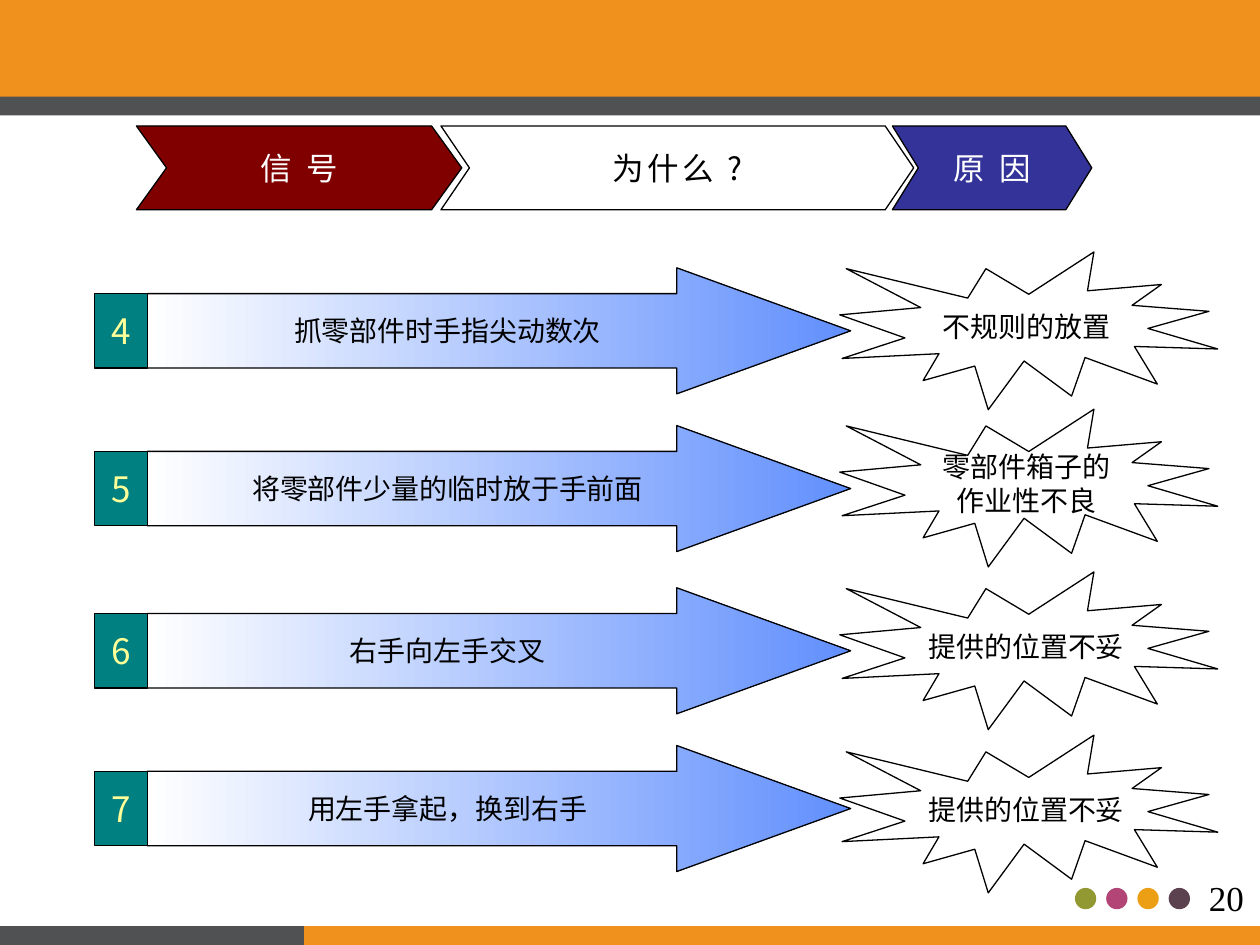
import pptx
import pptx.util
import pptx.dml.color
import pptx.enum.shapes
import pptx.enum.text
import pptx.oxml.ns
import lxml.etree

Cm = pptx.util.Cm
Pt = pptx.util.Pt
RGB = pptx.dml.color.RGBColor
KIND = pptx.enum.shapes.MSO_SHAPE
TEXT = pptx.enum.text

BLACK = RGB(0x00, 0x00, 0x00)
WHITE = RGB(0xFF, 0xFF, 0xFF)
ORANGE = RGB(0xF0, 0x90, 0x1D)
GREY = RGB(0x50, 0x51, 0x53)
TEAL = RGB(0x00, 0x80, 0x80)
YELLOW = RGB(0xFF, 0xFF, 0x99)
BLUE = RGB(0x61, 0x8F, 0xFD)
NAVY = RGB(0x33, 0x33, 0x99)
MAROON = RGB(0x80, 0x00, 0x00)
DOTS = (RGB(0x93, 0x99, 0x32), RGB(0xB2, 0x44, 0x76),
        RGB(0xEC, 0x9F, 0x14), RGB(0x5C, 0x41, 0x4F))

SANS = "Noto Sans CJK SC"
SERIF = "Times New Roman"
FRAME = {"word_wrap": False, "vertical_anchor": TEXT.MSO_ANCHOR.MIDDLE}

# left, width, notch, fill, text colour, text; the leftmost lies on top
HEADS = (
    (17.99, 4.02, 0.31, NAVY, WHITE, "原 因"),
    (8.89, 9.53, 0.34, WHITE, BLACK, "为什么 ?"),
    (2.75, 6.56, 0.36, MAROON, WHITE, "信 号"),
)
# arrow top, burst top, number, signal, cause
ROWS = (
    (5.4, 5.08, "4", "抓零部件时手指尖动数次", "不规则的放置"),
    (8.58, 8.25, "5", "将零部件少量的临时放于手前面", "零部件箱子的\n作业性不良"),
    (11.85, 11.53, "6", "右手向左手交叉", "提供的位置不妥"),
    (15.03, 14.82, "7", "用左手拿起，换到右手", "提供的位置不妥"),
)


def put(item, form):
    """Set each attribute named in the dict."""
    for key, val in form.items():
        setattr(item, key, val)


def shape(slide, kind, box, fill=None, line=None):
    new = slide.shapes.add_shape(kind, *map(Cm, box))
    new.shadow.inherit = False
    if fill is None:
        new.fill.background()
    else:
        new.fill.solid()
        new.fill.fore_color.rgb = fill
    if line is None:
        new.line.fill.background()
    else:
        new.line.color.rgb = line
        new.line.width = Pt(0.75)
    return new


def write(item, text, size, color, face=SANS, gap=0):
    """Fill a shape with centred lines; gap is letter spacing in points."""
    frame = item.text_frame
    put(frame, FRAME)
    for num, words in enumerate(text.split("\n")):
        para = frame.add_paragraph() if num else frame.paragraphs[0]
        para.alignment = TEXT.PP_ALIGN.CENTER
        run = para.add_run()
        run.text = words
        put(run.font, {"size": Pt(size), "name": face})
        run.font.color.rgb = color
        props = run.font._element
        east = lxml.etree.SubElement(props, pptx.oxml.ns.qn("a:ea"))
        east.set("typeface", face)
        if gap:
            props.set("spc", str(gap * 100))


def shade(item):
    """Blend from white at the left to blue at the right."""
    item.fill.gradient()
    item.fill.gradient_angle = 0
    for stop, place, color in zip(item.fill.gradient_stops, (0, 1), (WHITE, BLUE)):
        stop.position = place
        stop.color.rgb = color


def trim(slide):
    """Draw the bands, the dots and the page number."""
    for num, color in enumerate(DOTS):
        shape(slide, KIND.OVAL, (21.67 + 0.63 * num, 17.9, 0.43, 0.43), color)
    bands = (
        ((0, 0, 25.4, 1.96), ORANGE),
        ((0, 1.95, 25.4, 0.38), GREY),
        ((4.95, 18.67, 20.45, 0.38), ORANGE),
        ((0, 18.67, 6.13, 0.38), GREY),
    )
    for box, color in bands:
        shape(slide, KIND.RECTANGLE, box, color)
    page = slide.shapes.add_textbox(*map(Cm, (24.05, 17.53, 1.35, 1.11)))
    write(page, "20", 20, BLACK, SERIF)
    page.text_frame.auto_size = TEXT.MSO_AUTO_SIZE.SHAPE_TO_FIT_TEXT


def head(slide, left, width, notch, fill, color, text):
    item = shape(slide, KIND.CHEVRON, (left, 2.54, width, 1.69), fill, BLACK)
    item.adjustments[0] = notch
    write(item, text, 18, color, gap=2)


def row(slide, top, peak, num, sign, cause):
    arrow = shape(slide, KIND.RIGHT_ARROW, (2.97, top, 14.18, 2.54), WHITE, BLACK)
    arrow.adjustments[0] = 0.59
    arrow.adjustments[1] = 1.38
    shade(arrow)
    write(arrow, sign, 16, BLACK)
    tag = shape(slide, KIND.RECTANGLE, (1.91, top + 0.52, 1.06, 1.5), TEAL, BLACK)
    write(tag, num, 20, YELLOW)
    burst = shape(slide, KIND.EXPLOSION1, (16.93, peak, 7.62, 3.18), line=BLACK)
    write(burst, cause, 16, BLACK)


def main():
    deck = pptx.Presentation()
    put(deck, {"slide_width": Cm(25.4), "slide_height": Cm(19.05)})
    slide = deck.slides.add_slide(deck.slide_layouts[6])
    trim(slide)
    for item in ROWS:
        row(slide, *item)
    for item in HEADS:
        head(slide, *item)
    deck.save("out.pptx")


if __name__ == "__main__":
    main()
